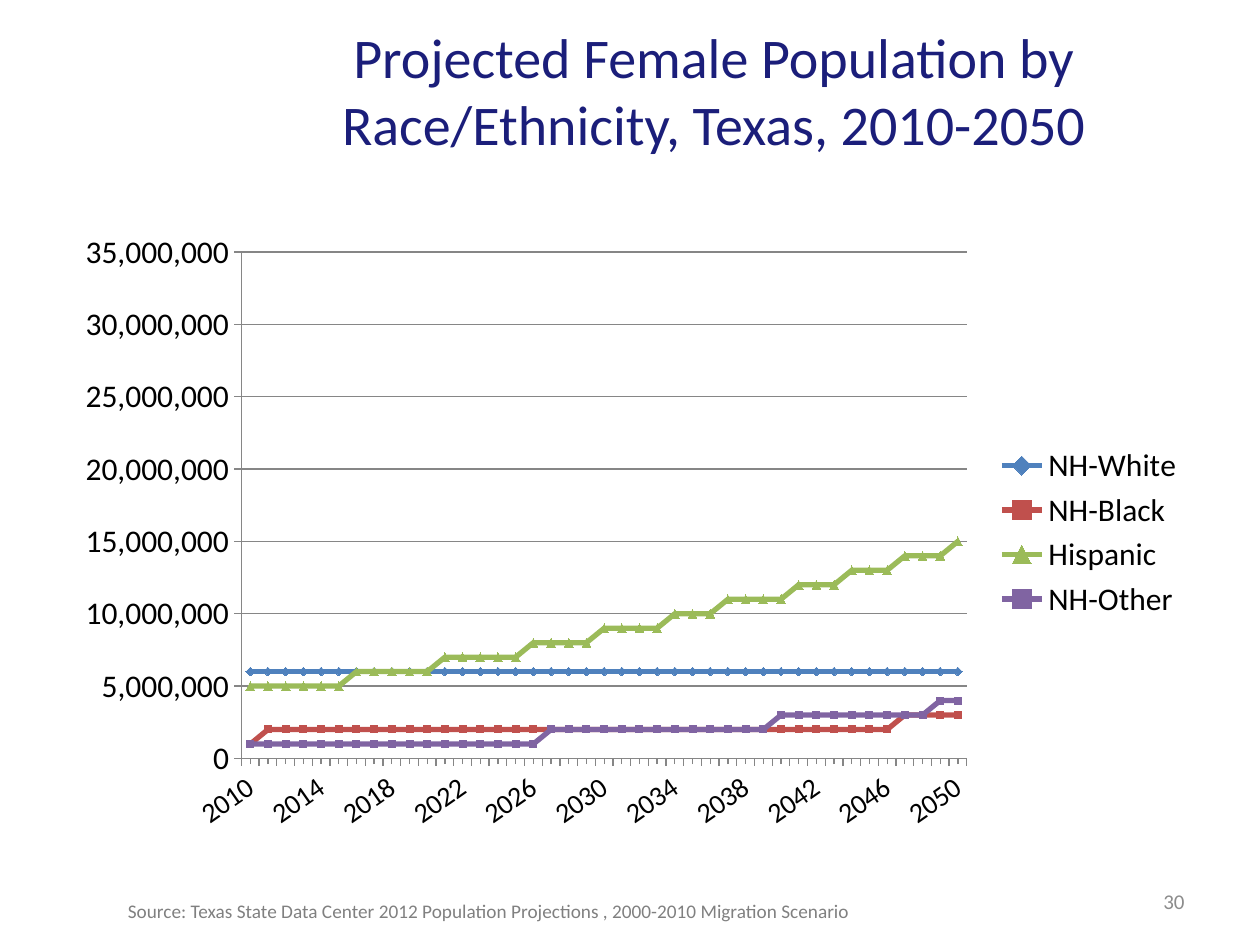
from lxml import etree
from pptx import Presentation
from pptx.chart.data import CategoryChartData
from pptx.dml.color import RGBColor
from pptx.enum.chart import XL_CHART_TYPE, XL_LEGEND_POSITION, XL_MARKER_STYLE, XL_TICK_MARK
from pptx.enum.text import MSO_ANCHOR, PP_ALIGN
from pptx.oxml.ns import qn
from pptx.util import Pt

COLORS = {
    "title": "1B1E7A", "text": "000000", "number": "8C8C8C", "source": "808080",
    "axis": "868686", "NH-White": "4F81BD", "NH-Black": "C0504D",
    "Hispanic": "9BBB59", "NH-Other": "8064A2",
}
FONT = "Calibri"
YEARS = range(2010, 2051)
MILLIONS_AND_YEARS = {
    "NH-White": [(6, 41)],
    "NH-Black": [(1, 1), (2, 36), (3, 4)],
    "Hispanic": [(5, 6), (6, 5), (7, 5), (8, 4), (9, 4), (10, 3),
                 (11, 4), (12, 3), (13, 3), (14, 3), (15, 1)],
    "NH-Other": [(1, 17), (2, 13), (3, 9), (4, 2)],
}
MARKERS = {
    "NH-White": (XL_MARKER_STYLE.DIAMOND, 5),
    "NH-Black": (XL_MARKER_STYLE.SQUARE, 4),
    "Hispanic": (XL_MARKER_STYLE.TRIANGLE, 5),
    "NH-Other": (XL_MARKER_STYLE.SQUARE, 4),
}


def rgb(name):
    return RGBColor.from_string(COLORS[name])


def style_font(font, size, color):
    font.name = FONT
    font.size = Pt(size)
    font.color.rgb = rgb(color)


def yearly_values(runs):
    return [millions * 1000000 for millions, years in runs for _ in range(years)]


def add_title(slide, left, top, width, height):
    title = slide.shapes.title
    title.left, title.top, title.width, title.height = map(Pt, (left, top, width, height))
    frame = title.text_frame
    frame.text = "Projected Female Population by Race/Ethnicity, Texas, 2010-2050"
    frame.word_wrap = True
    frame.vertical_anchor = MSO_ANCHOR.MIDDLE
    frame.paragraphs[0].alignment = PP_ALIGN.CENTER
    style_font(frame.paragraphs[0].runs[0].font, 32, "title")


def add_label(slide, left, top, width, height, text, size, color, alignment, anchor):
    shape = slide.shapes.add_textbox(Pt(left), Pt(top), Pt(width), Pt(height))
    frame = shape.text_frame
    frame.word_wrap = True
    frame.vertical_anchor = anchor
    frame.text = text
    frame.paragraphs[0].alignment = alignment
    style_font(frame.paragraphs[0].runs[0].font, size, color)


def place_plot(chart, x, y, w, h):
    plot_area = chart.plots[0]._element.getparent()
    layout = plot_area.find(qn("c:layout"))
    if layout is None:
        layout = etree.Element(qn("c:layout"))
        plot_area.insert(0, layout)
    manual = etree.SubElement(layout, qn("c:manualLayout"))
    settings = {"layoutTarget": "inner", "xMode": "edge", "yMode": "edge",
                "x": x, "y": y, "w": w, "h": h}
    for name, value in settings.items():
        etree.SubElement(manual, qn(f"c:{name}")).set("val", str(value))


def slant_year_labels(axis, degrees, skip):
    element = axis._element
    body = element.find(qn("c:txPr")).find(qn("a:bodyPr"))
    body.set("rot", str(-degrees * 60000))
    body.set("vert", "horz")
    label_skip = etree.Element(qn("c:tickLblSkip"))
    label_skip.set("val", str(skip))
    element.find(qn("c:noMultiLvlLbl")).addprevious(label_skip)


def style_axes(chart):
    for axis, size in ((chart.category_axis, 16), (chart.value_axis, 18)):
        style_font(axis.tick_labels.font, size, "text")
        axis.format.line.color.rgb = rgb("axis")
        axis.major_tick_mark = XL_TICK_MARK.OUTSIDE
        axis.minor_tick_mark = XL_TICK_MARK.NONE
    chart.category_axis.minor_tick_mark = XL_TICK_MARK.OUTSIDE
    slant_year_labels(chart.category_axis, 35, 4)
    value_axis = chart.value_axis
    value_axis.minimum_scale = 0
    value_axis.maximum_scale = 35000000
    value_axis.major_unit = 5000000
    value_axis.has_major_gridlines = True
    value_axis.major_gridlines.format.line.color.rgb = rgb("axis")
    value_axis.tick_labels.number_format = "#,##0"
    value_axis.tick_labels.number_format_is_linked = False


def add_population_chart(slide, left, top, width, height):
    data = CategoryChartData(number_format="#,##0")
    data.categories = [str(year) for year in YEARS]
    for name, runs in MILLIONS_AND_YEARS.items():
        data.add_series(name, yearly_values(runs))
    chart = slide.shapes.add_chart(
        XL_CHART_TYPE.LINE_MARKERS, Pt(left), Pt(top), Pt(width), Pt(height), data
    ).chart
    chart.has_title = False
    style_font(chart.font, 18, "text")
    chart.has_legend = True
    chart.legend.position = XL_LEGEND_POSITION.RIGHT
    chart.legend.include_in_layout = False
    style_font(chart.legend.font, 18, "text")
    style_axes(chart)
    place_plot(chart, 102 / width, 18 / height, 414.5 / width, 289.5 / height)
    chart.plots[0].vary_by_categories = False
    for series in chart.plots[0].series:
        series.smooth = False
        series.format.line.color.rgb = rgb(series.name)
        series.format.line.width = Pt(3)
        marker = series.marker
        marker.style, marker.size = MARKERS[series.name]
        marker.format.fill.solid()
        marker.format.fill.fore_color.rgb = rgb(series.name)
        marker.format.line.color.rgb = rgb(series.name)


def main():
    presentation = Presentation()
    presentation.slide_width, presentation.slide_height = Pt(720), Pt(540)
    slide = presentation.slides.add_slide(presentation.slide_layouts[5])
    add_title(slide, 126, 12, 564, 78)
    add_population_chart(slide, 36, 126, 648, 356.4)
    add_label(slide, 516, 500.5, 168, 28.8, "30", 12, "number",
              PP_ALIGN.RIGHT, MSO_ANCHOR.MIDDLE)
    add_label(slide, 66, 510.5, 690, 20.6,
              "Source: Texas State Data Center 2012 Population Projections , "
              "2000-2010 Migration Scenario",
              11, "source", PP_ALIGN.LEFT, MSO_ANCHOR.TOP)
    presentation.save("out.pptx")


if __name__ == "__main__":
    main()
